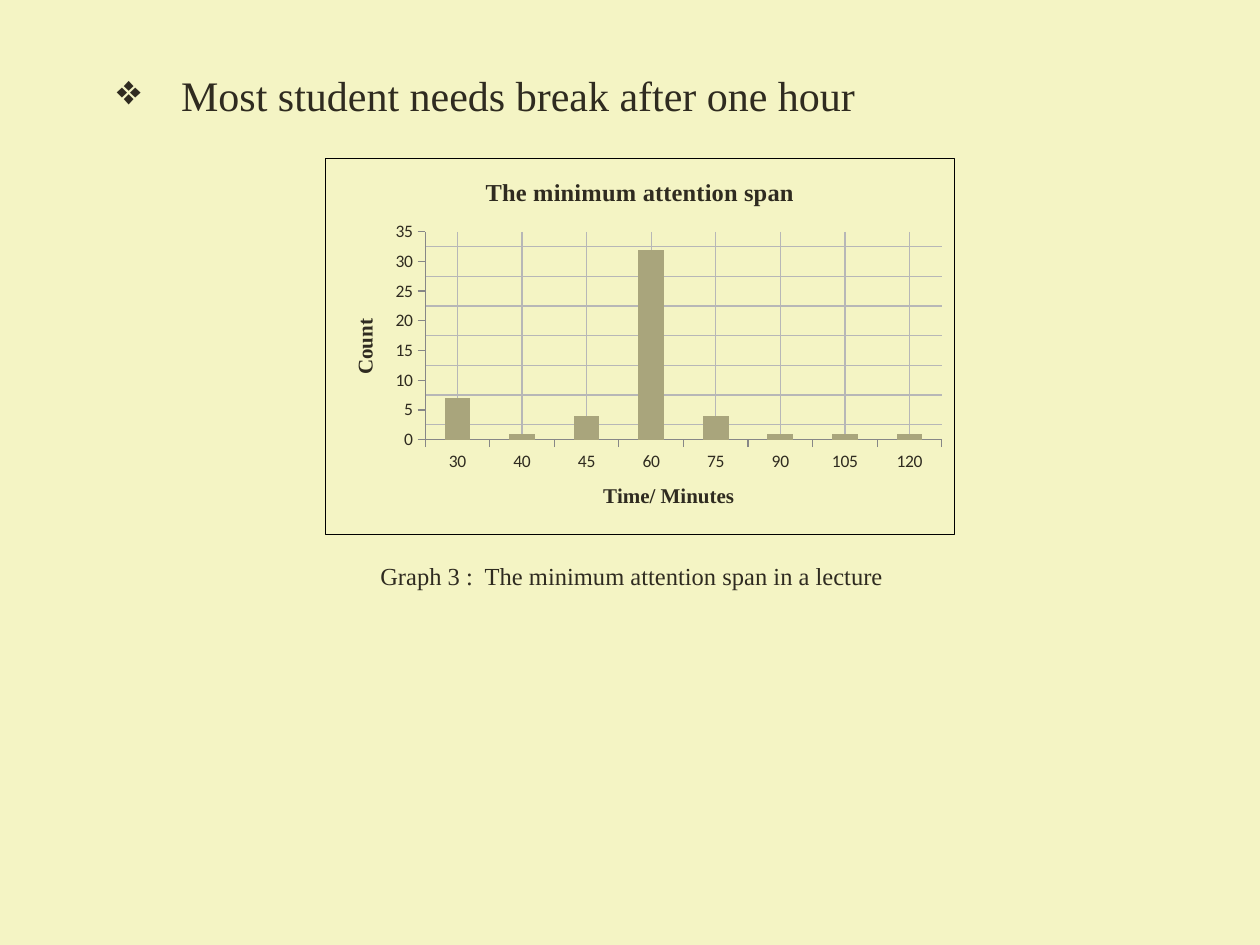
from dataclasses import dataclass

from lxml import etree
from pptx import Presentation
from pptx.chart.data import CategoryChartData
from pptx.dml.color import RGBColor
from pptx.enum.chart import XL_CHART_TYPE, XL_TICK_MARK
from pptx.enum.text import MSO_AUTO_SIZE
from pptx.oxml import parse_xml
from pptx.oxml.ns import qn
from pptx.util import Inches, Pt

COLUMN = XL_CHART_TYPE.COLUMN_CLUSTERED
OUT = XL_TICK_MARK.OUTSIDE
NONE = XL_TICK_MARK.NONE
GROW = MSO_AUTO_SIZE.SHAPE_TO_FIT_TEXT
BORDER = (
    '<c:spPr xmlns:c="http://schemas.openxmlformats.org/drawingml/2006/chart" '
    'xmlns:a="http://schemas.openxmlformats.org/drawingml/2006/main">'
    '<a:noFill/><a:ln w="{width}"><a:solidFill><a:srgbClr val="{color}"/>'
    '</a:solidFill></a:ln></c:spPr>'
)


@dataclass(frozen=True)
class Theme:
    back: str = "F4F4C4"
    ink: str = "2F2B20"
    bar: str = "A9A57C"
    grid: str = "B7B7B7"
    axis: str = "878787"
    edge: str = "000000"
    serif: str = "Times New Roman"
    sans: str = "Calibri"
    lead: int = 24
    title: int = 14
    label: int = 12
    tick: int = 10


def rgb(color):
    return RGBColor.from_string(color)


class Deck:
    def __init__(self, theme):
        self.theme = theme
        self.show = Presentation()
        self.show.slide_width = Inches(10)
        self.show.slide_height = Inches(7.5)
        self.slide = self.show.slides.add_slide(self.show.slide_layouts[6])
        fill = self.slide.background.fill
        fill.solid()
        fill.fore_color.rgb = rgb(theme.back)

    def style(self, font, name, size, bold=False):
        font.name = name
        font.size = Pt(size)
        font.bold = bold
        font.color.rgb = rgb(self.theme.ink)

    def run(self, frame, words, size, bold=False):
        para = frame.paragraphs[0]
        run = para.add_run()
        run.text = words
        self.style(run.font, self.theme.serif, size, bold)
        return para

    def text(self, area, words, size, bullet=None):
        box = self.slide.shapes.add_textbox(*map(Inches, area))
        frame = box.text_frame
        frame.word_wrap = True
        frame.auto_size = GROW
        para = self.run(frame, words, size)
        if bullet:
            props = para._p.get_or_add_pPr()
            indent = Inches(0.51)
            props.set("marL", str(indent))
            props.set("indent", str(-indent))
            mark = etree.SubElement(props, qn("a:buChar"))
            mark.set("char", bullet)

    def scale(self, axis, words):
        self.run(axis.axis_title.text_frame, words, self.theme.label, True)
        axis.has_major_gridlines = False
        axis.has_minor_gridlines = True
        axis.major_tick_mark = OUT
        axis.minor_tick_mark = NONE
        axis.format.line.color.rgb = rgb(self.theme.axis)
        line = axis.minor_gridlines.format.line if hasattr(axis, "minor_gridlines") else None
        if line is None:
            grid = axis._element.find(qn("c:minorGridlines"))
            props = etree.SubElement(grid, qn("c:spPr"))
            edge = etree.SubElement(props, qn("a:ln"), w=str(Pt(0.75)))
            fill = etree.SubElement(edge, qn("a:solidFill"))
            etree.SubElement(fill, qn("a:srgbClr"), val=self.theme.grid)

    def chart(self, area, title, across, up, counts):
        data = CategoryChartData()
        data.categories = list(counts)
        data.add_series("Series 1", counts.values())
        chart = self.slide.shapes.add_chart(COLUMN, *map(Inches, area), data).chart
        self.style(chart.font, self.theme.sans, self.theme.tick)
        self.run(chart.chart_title.text_frame, title, self.theme.title, True)
        chart.chart_title.include_in_layout = False
        chart.has_legend = False
        self.scale(chart.category_axis, across)
        self.scale(chart.value_axis, up)
        chart.value_axis.minimum_scale = 0
        chart.value_axis.maximum_scale = 35
        chart.value_axis.major_unit = 5
        chart.value_axis.minor_unit = 2.5
        plot = chart.plots[0]
        plot.gap_width = 150
        plot.vary_by_categories = False
        fill = plot.series[0].format.fill
        fill.solid()
        fill.fore_color.rgb = rgb(self.theme.bar)
        edge = BORDER.format(width=Pt(0.75), color=self.theme.edge)
        chart._chartSpace.find(qn("c:chart")).addnext(parse_xml(edge))

    def save(self):
        self.show.save("out.pptx")


def main():
    theme = Theme()
    deck = Deck(theme)
    counts = {"30": 7, "40": 1, "45": 4, "60": 32,
              "75": 4, "90": 1, "105": 1, "120": 1}
    deck.chart((2.58, 1.25, 5, 3), "The minimum attention span",
               "Time/ Minutes", "Count", counts)
    deck.text((0.83, 0.5, 7.17, 0.5), "Most student needs break after one hour",
              theme.lead, "❖")
    deck.text((2.92, 4.4, 4.33, 0.34),
              "Graph 3 :  The minimum attention span in a lecture", theme.title)
    deck.save()


if __name__ == "__main__":
    main()
